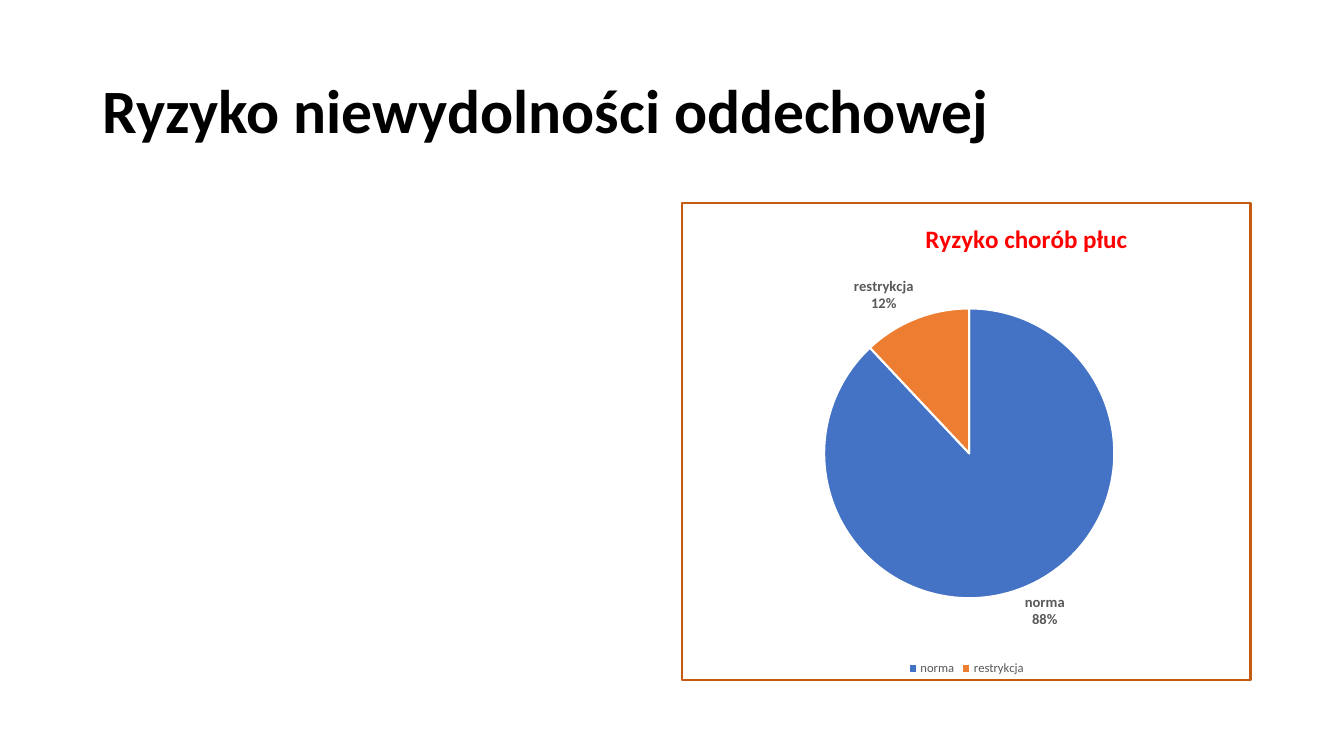
import dataclasses

import pptx
import pptx.chart.data
import pptx.dml.color
import pptx.enum.chart
import pptx.enum.text
import pptx.oxml
import pptx.oxml.ns
import pptx.util

Inches = pptx.util.Inches
qn = pptx.oxml.ns.qn


@dataclasses.dataclass(frozen=True)
class Theme:
    face: str = "Calibri"
    ink: str = "000000"
    alert: str = "FF0000"
    grey: str = "595959"
    paper: str = "FFFFFF"
    frame: str = "C55A11"
    slices: tuple = ("4472C4", "ED7D31")
    head: float = 44
    title: float = 18
    label: float = 10.5
    base: float = 10
    key: float = 9


THEME = Theme()


def rgb(code):
    return pptx.dml.color.RGBColor.from_string(code)


def style(font, size, color, bold=False):
    font.name = THEME.face
    font.size = pptx.util.Pt(size)
    font.color.rgb = rgb(color)
    font.bold = bold


def add_head(slide, text):
    head = slide.shapes.title
    head.left, head.top = Inches(0.92), Inches(0.4)
    head.width, head.height = Inches(11.5), Inches(1.45)
    frame = head.text_frame
    frame.text = text
    frame.vertical_anchor = pptx.enum.text.MSO_ANCHOR.MIDDLE
    para = frame.paragraphs[0]
    para.alignment = pptx.enum.text.PP_ALIGN.LEFT
    para.line_spacing = 0.9
    style(para.font, THEME.head, THEME.ink, True)


def place(part, index, inner=False, **edges):
    """Position a chart part by fractions of the chart area."""
    for old in part.findall(qn("c:layout")):
        part.remove(old)
    rules = '<c:layoutTarget val="inner"/>' if inner else ""
    rules += '<c:xMode val="edge"/><c:yMode val="edge"/>'
    rules += "".join(f'<c:{k} val="{v}"/>' for k, v in edges.items())
    part.insert(index, pptx.oxml.parse_xml(
        f'<c:layout {pptx.oxml.ns.nsdecls("c")}>'
        f"<c:manualLayout>{rules}</c:manualLayout></c:layout>"))


def add_frame(root):
    """Fill the chart area and draw its border."""
    area = pptx.oxml.parse_xml(
        f'<c:spPr {pptx.oxml.ns.nsdecls("c", "a")}>'
        f'<a:solidFill><a:srgbClr val="{THEME.paper}"/></a:solidFill>'
        f'<a:ln w="{pptx.util.Pt(2)}"><a:solidFill>'
        f'<a:srgbClr val="{THEME.frame}"/></a:solidFill></a:ln></c:spPr>')
    root.find(qn("c:chart")).addnext(area)


def set_labels(plot, root):
    plot.has_data_labels = True
    labels = plot.data_labels
    style(labels.font, THEME.label, THEME.grey, True)
    labels.number_format = "0%"
    labels.number_format_is_linked = False
    labels.show_value = False
    labels.show_category_name = True
    labels.show_percentage = True
    labels.position = pptx.enum.chart.XL_LABEL_POSITION.OUTSIDE_END
    gap = pptx.oxml.parse_xml(
        f'<c:separator {pptx.oxml.ns.nsdecls("c")}>\n</c:separator>')
    last = next(root.iter(qn("c:dLbls"))).find(qn("c:showBubbleSize"))
    last.addnext(gap)


def add_pie(slide, title, values):
    data = pptx.chart.data.CategoryChartData()
    data.categories = list(values)
    data.add_series("Series 1", list(values.values()))
    chart = slide.shapes.add_chart(
        pptx.enum.chart.XL_CHART_TYPE.PIE, Inches(6.75), Inches(2),
        Inches(5.67), Inches(4.76), data).chart
    root = chart.element
    style(chart.font, THEME.base, THEME.ink)
    add_frame(root)

    chart.has_title = True
    frame = chart.chart_title.text_frame
    frame.text = title
    style(frame.paragraphs[0].font, THEME.title, THEME.alert, True)
    place(next(root.iter(qn("c:title"))), 1, x=0.42, y=0.03)
    place(next(root.iter(qn("c:plotArea"))), 0, True,
          x=0.25, y=0.22, w=0.51, h=0.61)

    chart.has_legend = True
    chart.legend.position = pptx.enum.chart.XL_LEGEND_POSITION.BOTTOM
    chart.legend.include_in_layout = False
    style(chart.legend.font, THEME.key, THEME.grey)

    plot = chart.plots[0]
    plot.vary_by_categories = True
    set_labels(plot, root)
    for i, color in enumerate(THEME.slices):
        look = plot.series[0].points[i].format
        look.fill.solid()
        look.fill.fore_color.rgb = rgb(color)
        look.line.color.rgb = rgb(THEME.paper)
        look.line.width = pptx.util.Pt(1.5)


def main():
    deck = pptx.Presentation()
    deck.slide_width, deck.slide_height = Inches(13.33), Inches(7.5)
    slide = deck.slides.add_slide(deck.slide_layouts[5])
    add_head(slide, "Ryzyko niewydolności oddechowej")
    add_pie(slide, "Ryzyko chorób płuc", {"norma": 88, "restrykcja": 12})
    deck.save("out.pptx")


if __name__ == "__main__":
    main()
